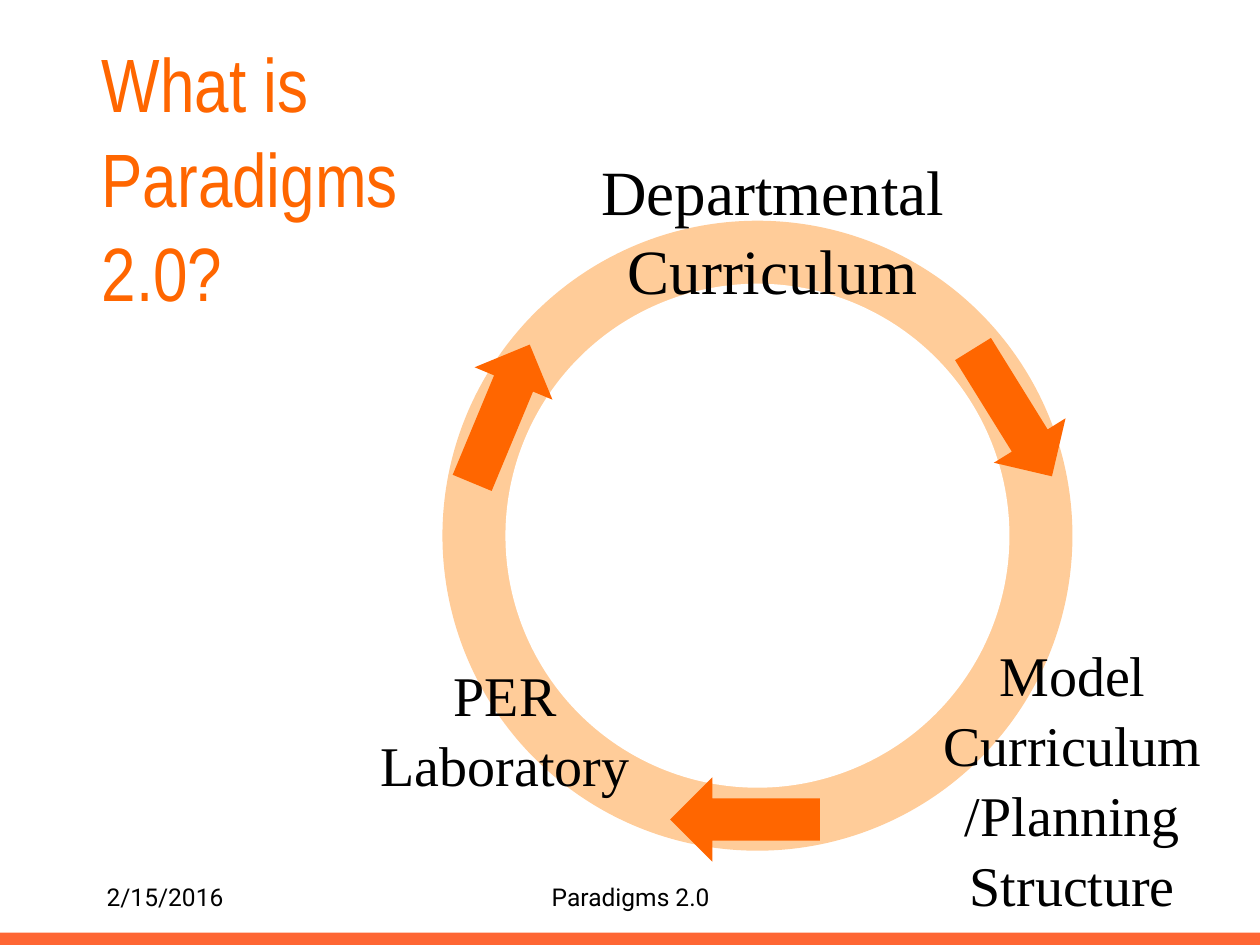
"""Build the Paradigms 2.0 cycle slide."""
from dataclasses import dataclass

from pptx import Presentation
from pptx.dml.color import RGBColor
from pptx.enum.shapes import MSO_SHAPE as Preset
from pptx.enum.text import MSO_ANCHOR as Anchor, MSO_AUTO_SIZE as AutoSize, PP_ALIGN as Align
from pptx.util import Cm, Pt


@dataclass(frozen=True)
class Theme:
    orange: str = "FF6600"
    peach: str = "FFCC99"
    bar: str = "FE6634"
    white: str = "FFFFFF"
    black: str = "000000"
    title_font: str = "Arial Narrow"
    footer_font: str = "Roboto"
    label_font: str = "Times New Roman"
    title_size: float = 43.2
    main_label_size: int = 36
    label_size: int = 32
    footer_size: int = 14
    leading: float = 1.04


THEME = Theme()


def place(shape, left, top, width, height):
    shape.left, shape.top = Cm(left), Cm(top)
    shape.width, shape.height = Cm(width), Cm(height)


def write(frame, text, font_name, size, color, align, leading=1.0):
    frame.word_wrap = True
    frame.auto_size = AutoSize.NONE
    frame.text = text
    for paragraph in frame.paragraphs:
        paragraph.alignment = align
        paragraph.line_spacing = leading
        for run in paragraph.runs:
            run.font.name = font_name
            run.font.size = Pt(size)
            run.font.color.rgb = RGBColor.from_string(color)


def add_title(slide, text):
    title = slide.shapes.title
    place(title, 1.9, 0.84, 11, 5.38)
    frame = title.text_frame
    write(frame, text, THEME.title_font, THEME.title_size, THEME.orange,
          Align.LEFT, THEME.leading)
    frame.vertical_anchor = Anchor.MIDDLE
    frame.margin_left = frame.margin_right = Cm(0.15)
    frame.margin_top = frame.margin_bottom = Cm(0.15)


def add_filled(slide, preset, box, color, rotation=0):
    shape = slide.shapes.add_shape(preset, *map(Cm, box))
    shape.shadow.inherit = False
    shape.fill.solid()
    shape.fill.fore_color.rgb = RGBColor.from_string(color)
    shape.line.fill.background()
    shape.rotation = rotation


def add_disc(slide, diameter, color):
    center_x, center_y = 15.27, 10.8
    box = (center_x - diameter / 2, center_y - diameter / 2, diameter, diameter)
    add_filled(slide, Preset.OVAL, box, color)


def add_arrow(slide, center_x, center_y, rotation):
    length, breadth = 3.02, 1.7
    box = (center_x - length / 2, center_y - breadth / 2, length, breadth)
    add_filled(slide, Preset.RIGHT_ARROW, box, THEME.orange, rotation)


def add_label(slide, text, box, size):
    label = slide.shapes.add_textbox(*map(Cm, box))
    write(label.text_frame, text, THEME.label_font, size, THEME.black,
          Align.CENTER, THEME.leading)


def add_footer(slide, text, left, width, align):
    footer = slide.shapes.add_textbox(Cm(left), Cm(17.65), Cm(width), Cm(0.97))
    write(footer.text_frame, text, THEME.footer_font, THEME.footer_size,
          THEME.black, align)


def main():
    deck = Presentation()
    deck.slide_width, deck.slide_height = Cm(25.4), Cm(19.05)
    slide = deck.slides.add_slide(deck.slide_layouts[5])

    add_filled(slide, Preset.RECTANGLE, (-0.18, 18.8, 25.96, 0.38), THEME.bar)
    add_title(slide, "What is\vParadigms\v2.0?")
    add_footer(slide, "2/15/2016", 1.9, 5.28, Align.LEFT)
    add_footer(slide, "Paradigms 2.0", 8.69, 8.05, Align.CENTER)

    add_disc(slide, 12.7, THEME.peach)
    add_disc(slide, 10.16, THEME.white)

    stages = (
        ("Departmental Curriculum", (10.64, 2.9, 9.88, 3.33), THEME.main_label_size),
        ("Model Curriculum\n/Planning Structure", (18.24, 12.73, 6.76, 5.74), THEME.label_size),
        ("PER Laboratory", (6.86, 13.13, 6.65, 3), THEME.label_size),
    )
    for text, box, size in stages:
        add_label(slide, text, box, size)

    for center_x, center_y, rotation in (
        (20.41, 8.32, 58.2),
        (10.1, 8.34, 292.6),
        (15.02, 16.52, 180),
    ):
        add_arrow(slide, center_x, center_y, rotation)

    deck.save("out.pptx")


if __name__ == "__main__":
    main()
